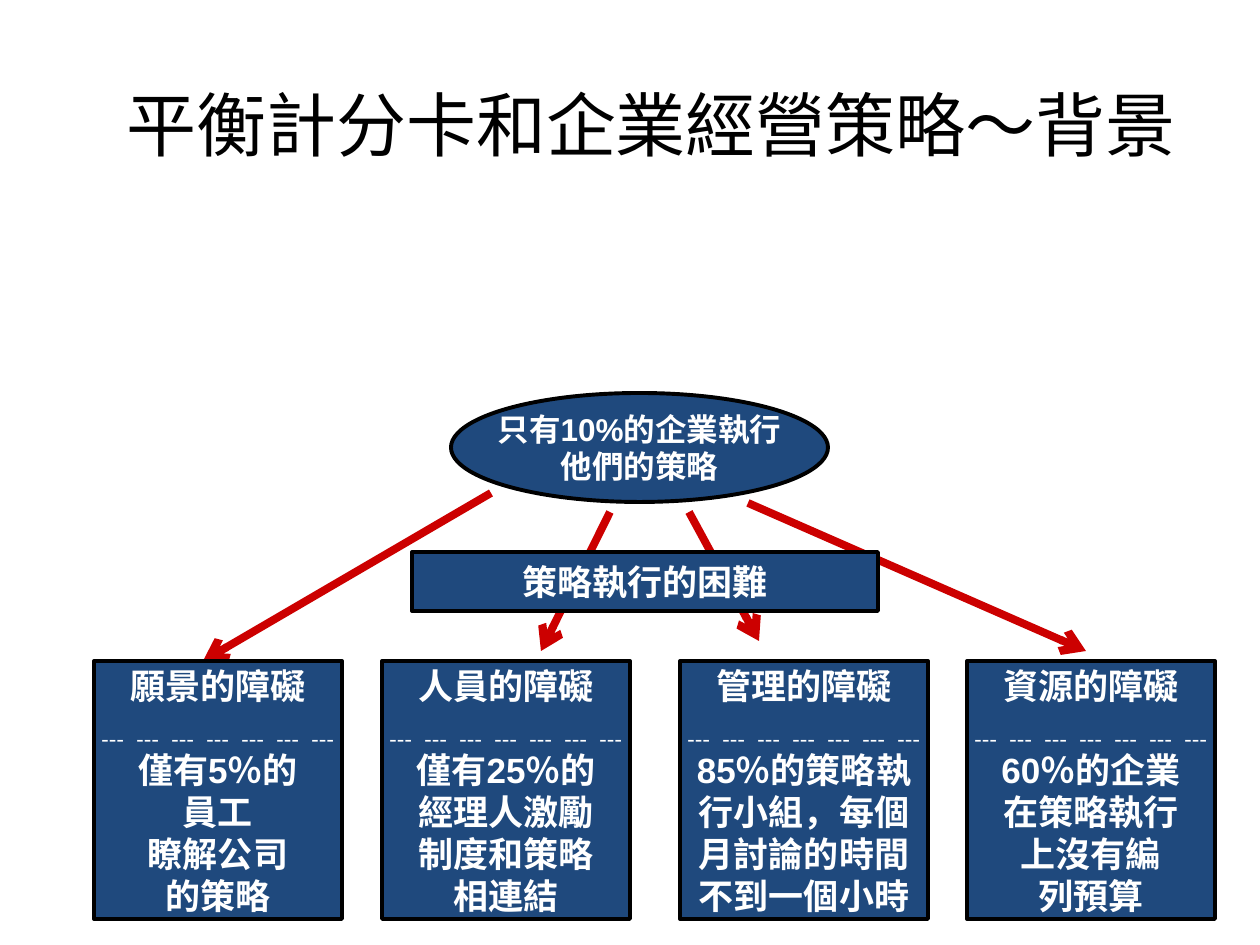
from dataclasses import dataclass

from lxml.etree import SubElement
from pptx import Presentation
from pptx.dml.color import RGBColor as Rgb
from pptx.enum.shapes import MSO_CONNECTOR as Connector, MSO_SHAPE as Shape
from pptx.enum.text import MSO_ANCHOR as Anchor, PP_ALIGN as Align
from pptx.oxml.ns import qn
from pptx.util import Emu, Pt


@dataclass(frozen=True)
class Theme:
    navy: Rgb = Rgb(0x1F, 0x49, 0x7D)
    red: Rgb = Rgb(0xCC, 0, 0)
    black: Rgb = Rgb(0, 0, 0)
    white: Rgb = Rgb(255, 255, 255)
    title_font: str = "Noto Sans CJK JP"
    body_font: str = "Arial"
    title_size: int = 40
    body_size: int = 20
    claim_size: int = 18


theme = Theme()


def px(*lengths):
    """Turn pixels, 126 to the inch, into EMU."""
    return [Emu(round(length * 914400 / 126)) for length in lengths]


def add_box(kind, bounds, lines, size):
    box = slide.shapes.add_shape(kind, *px(*bounds))
    box.shadow.inherit = False
    box.fill.solid()
    box.fill.fore_color.rgb = theme.navy
    box.line.color.rgb = theme.black
    box.line.width = Pt(2.25)
    frame = box.text_frame
    frame.text = "\n".join(lines)
    frame.word_wrap = False
    frame.vertical_anchor = Anchor.MIDDLE
    for para in frame.paragraphs:
        para.alignment = Align.CENTER
        font = para.runs[0].font
        font.name = theme.body_font
        font.size = Pt(size)
        font.bold = True
        font.color.rgb = theme.white


deck = Presentation()
deck.slide_width, deck.slide_height = px(1260, 945)
slide = deck.slides.add_slide(deck.slide_layouts[5])

title = slide.shapes.title
title.left, title.top, title.width, title.height = px(63, 58, 1176, 131)
title.text_frame.text = "平衡計分卡和企業經營策略～背景"
title.text_frame.vertical_anchor = Anchor.MIDDLE
title_para = title.text_frame.paragraphs[0]
title_para.alignment = Align.CENTER
span = title_para.runs[0]
span.font.size = Pt(theme.title_size)
span.font.color.rgb = theme.black
span.font.name = theme.title_font
SubElement(span.font._element, qn("a:ea"), typeface=theme.title_font)

# Arrows come first, so that the banner covers their middles.
arrows = [
    (491, 493, 203, 661),
    (610, 512, 541, 651),
    (689, 512, 759, 641),
    (748, 503, 1086, 651),
]
for ends in arrows:
    arrow = slide.shapes.add_connector(Connector.STRAIGHT, *px(*ends))
    arrow.line.color.rgb = theme.red
    arrow.line.width = Pt(4.5)
    SubElement(arrow.line._get_or_add_ln(), qn("a:tailEnd"), type="arrow")
    SubElement(arrow._element.spPr, qn("a:effectLst"))

add_box(Shape.OVAL, (451, 393, 377, 109), ["只有10%的企業執行", "他們的策略"], theme.claim_size)
add_box(Shape.RECTANGLE, (412, 552, 466, 59), ["策略執行的困難"], theme.body_size)

barriers = [
    (94, "願景的障礙", ["僅有5％的", "員工", "瞭解公司", "的策略"]),
    (382, "人員的障礙", ["僅有25％的", "經理人激勵", "制度和策略", "相連結"]),
    (680, "管理的障礙", ["85％的策略執", "行小組，每個", "月討論的時間", "不到一個小時"]),
    (967, "資源的障礙", ["60％的企業", "在策略執行", "上沒有編", "列預算"]),
]
for left, heading, details in barriers:
    lines = [heading, "﹍" * 7, *details]
    add_box(Shape.RECTANGLE, (left, 661, 248, 258), lines, theme.body_size)

deck.save("out.pptx")
